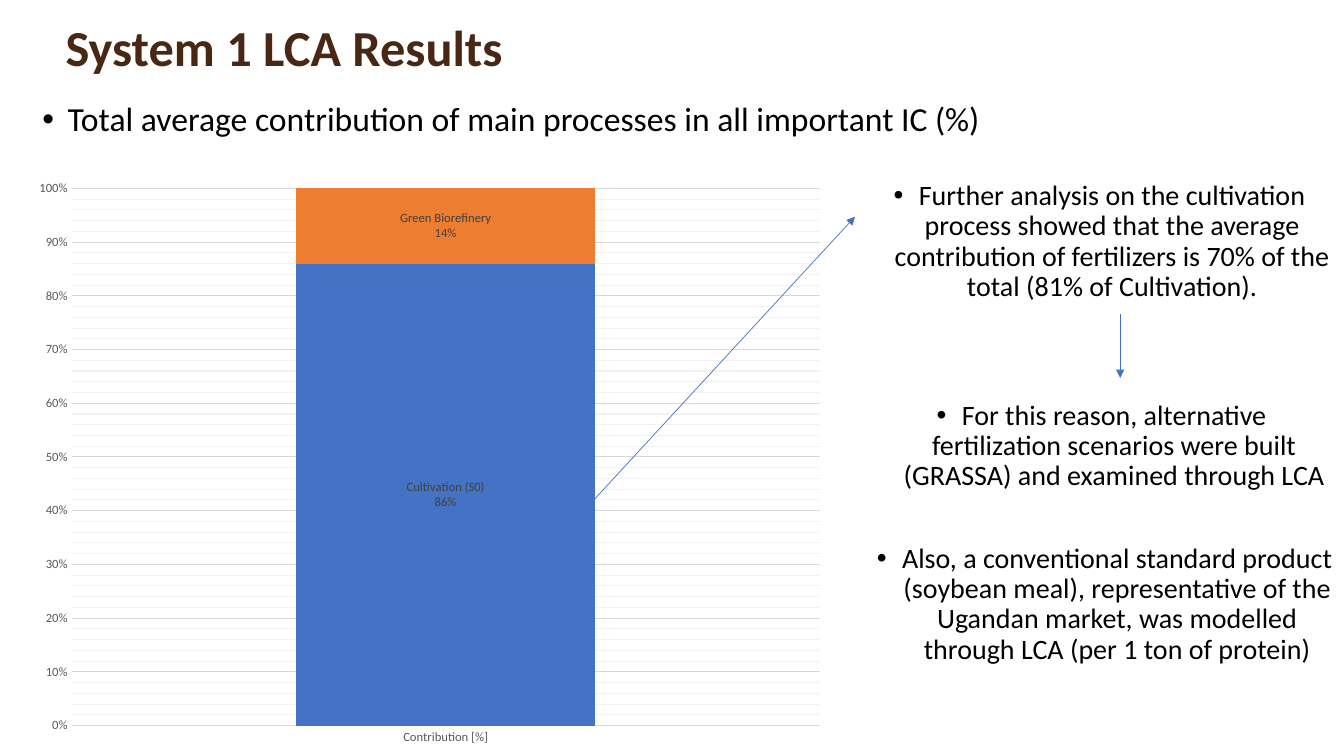
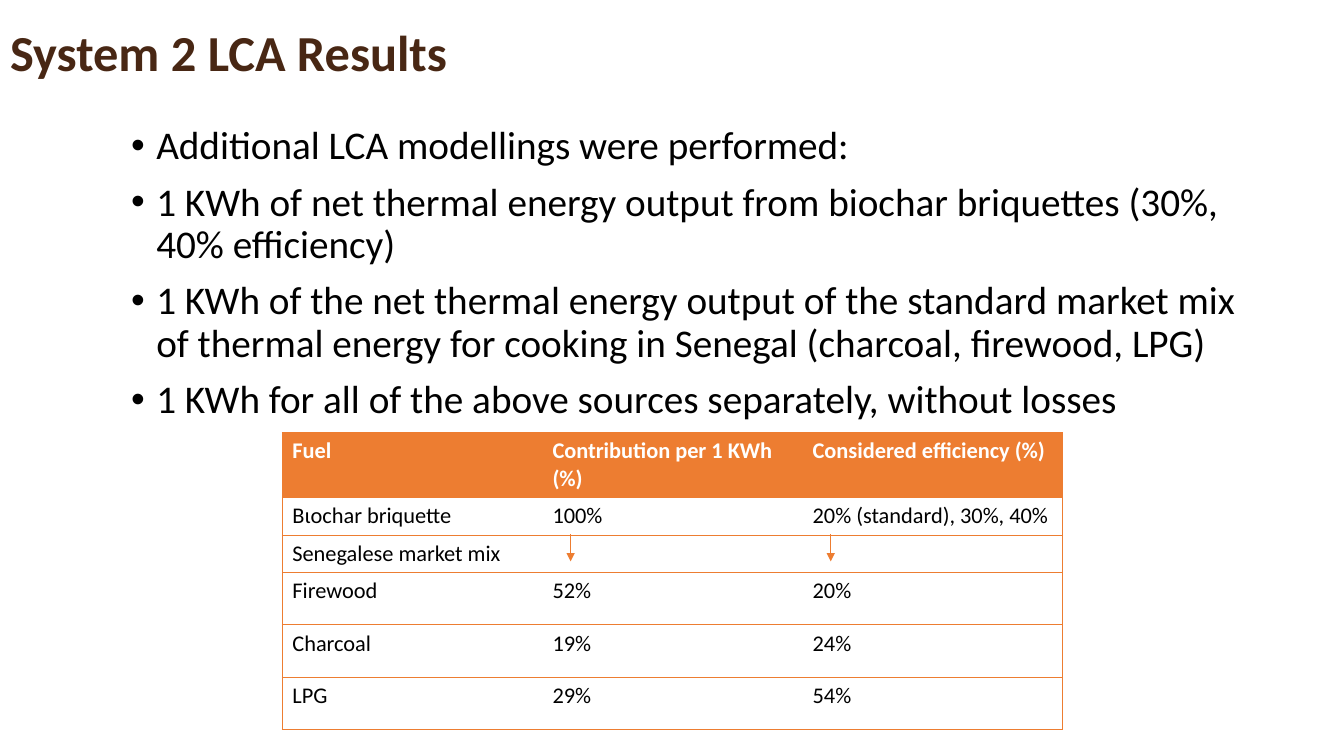
import dataclasses

import lxml.etree
import pptx
import pptx.chart.data
import pptx.dml.color
import pptx.enum.chart
import pptx.enum.shapes
import pptx.enum.text
import pptx.oxml.ns
import pptx.util

ALIGN = pptx.enum.text.PP_ALIGN
ANCHOR = pptx.enum.text.MSO_ANCHOR
CHART = pptx.enum.chart
qn = pptx.oxml.ns.qn
PLAIN_GRID = "{2D5ABB26-0587-4C30-8999-92F81FD0307C}"


@dataclasses.dataclass(frozen=True)
class Theme:
    font: str = "Calibri"
    brown: str = "482714"
    black: str = "000000"
    white: str = "FFFFFF"
    blue: str = "4472C4"
    orange: str = "ED7D31"
    axis: str = "595959"
    label: str = "404040"
    grid: str = "D9D9D9"
    faint: str = "F2F2F2"
    title: int = 36
    body: int = 28
    lead: int = 24
    note: int = 20
    cell: int = 16
    tick: int = 9
    thin: float = 0.5
    rule: float = 0.75


T = Theme()


def px(*sizes):
    """Turn px, 100 to the inch, into EMU."""
    return [pptx.util.Emu(size * 9144) for size in sizes]


def rgb(code):
    return pptx.dml.color.RGBColor.from_string(code)


def put(item, **vals):
    for key, val in vals.items():
        setattr(item, key, val)


def style(font, size, color, bold=False):
    put(font, name=T.font, size=pptx.util.Pt(size), bold=bold)
    font.color.rgb = rgb(color)


def stroke(line, color, width):
    line.color.rgb = rgb(color)
    line.width = pptx.util.Pt(width)


def add(parent, tag, **vals):
    return lxml.etree.SubElement(parent, qn(tag), vals)


def trace(parent, tag, color, width):
    """Add a solid line as XML."""
    line = add(parent, tag, w=str(pptx.util.Pt(width)))
    add(add(line, "a:solidFill"), "a:srgbClr", val=color)


def place(shape, box):
    put(shape, **dict(zip(("left", "top", "width", "height"), px(*box))))


def write(shape, texts, size, color=T.black, bold=False, bullet=True,
          align=ALIGN.LEFT, anchor=ANCHOR.TOP):
    frame = shape.text_frame
    put(frame, word_wrap=True, auto_size=pptx.enum.text.MSO_AUTO_SIZE.NONE,
        vertical_anchor=anchor)
    for i, text in enumerate(texts):
        para = frame.add_paragraph() if i else frame.paragraphs[0]
        if bullet:
            props = para._p.get_or_add_pPr()
            indent = px(25)[0]
            props.set("marL", str(indent))
            props.set("indent", str(-indent))
            add(props, "a:buFont", typeface="Arial")
            add(props, "a:buChar", char="•")
        put(para, alignment=align, line_spacing=0.9,
            space_before=pptx.util.Pt(10 if i else 0))
        run = para.add_run()
        run.text = text
        style(run.font, size, color, bold)


def start(deck, title, head, points, box, size):
    """Add a slide with its title and main list."""
    slide = deck.slides.add_slide(deck.slide_layouts[1])
    place(slide.shapes.title, head)
    write(slide.shapes.title, [title], T.title, T.brown, bold=True,
          bullet=False, anchor=ANCHOR.MIDDLE)
    body = slide.placeholders[1]
    place(body, box)
    write(body, points, size)
    return slide


def arrow(slide, ends, color):
    line = slide.shapes.add_connector(
        pptx.enum.shapes.MSO_CONNECTOR.STRAIGHT, *px(*ends))
    stroke(line.line, color, T.thin)
    props = line._element.spPr
    add(props.find(qn("a:ln")), "a:tailEnd", type="triangle")
    add(props, "a:effectLst")


def note(slide, text, box):
    shape = slide.shapes.add_textbox(*px(*box))
    write(shape, [text], T.note, align=ALIGN.CENTER)


def stack(slide, box, shares):
    """Draw one stacked column; shares holds name, value and colour."""
    data = pptx.chart.data.CategoryChartData(number_format="0%")
    data.categories = ["Contribution [%]"]
    for name, value, _ in shares:
        data.add_series(name, [value])
    chart = slide.shapes.add_chart(
        CHART.XL_CHART_TYPE.COLUMN_STACKED, *px(*box), data).chart
    put(chart, has_legend=False, has_title=False)
    style(chart.font, T.tick, T.axis)
    plot = chart.plots[0]
    put(plot, gap_width=150, overlap=100, vary_by_categories=False)
    for series, (_, _, color) in zip(plot.series, shares):
        series.format.fill.solid()
        series.format.fill.fore_color.rgb = rgb(color)
        labels = series.data_labels
        put(labels, show_value=True, show_series_name=True,
            number_format="0%", number_format_is_linked=False,
            position=CHART.XL_LABEL_POSITION.CENTER)
        style(labels.font, T.tick, T.label)
        mark = lxml.etree.Element(qn("c:separator"))
        mark.text = "\n"
        labels._element.find(qn("c:showBubbleSize")).addnext(mark)
    cats, vals = chart.category_axis, chart.value_axis
    for axis in (cats, vals):
        put(axis, major_tick_mark=CHART.XL_TICK_MARK.NONE,
            minor_tick_mark=CHART.XL_TICK_MARK.NONE)
        style(axis.tick_labels.font, T.tick, T.axis)
    stroke(cats.format.line, T.grid, T.rule)
    put(vals, minimum_scale=0, maximum_scale=1, major_unit=0.1,
        minor_unit=0.02, has_major_gridlines=True, has_minor_gridlines=True)
    put(vals.tick_labels, number_format="0%", number_format_is_linked=False)
    vals.format.line.fill.background()
    stroke(vals.major_gridlines.format.line, T.grid, T.rule)
    minor = vals._element.find(qn("c:minorGridlines"))
    trace(add(minor, "c:spPr"), "a:ln", T.faint, T.rule)


def edge(cell, sides):
    """Rule the named sides of a cell, given in the order L, R, T, B."""
    props = cell._tc.get_or_add_tcPr()
    for side in sides:
        trace(props, "a:ln" + side, T.orange, T.thin)


def grid(slide, left, top, width, highs, rows):
    """Draw the table; an empty cell gets a down arrow."""
    cols = len(rows[0])
    table = slide.shapes.add_table(
        len(rows), cols, *px(left, top, width * cols, sum(highs))).table
    table._tbl.tblPr.find(qn("a:tableStyleId")).text = PLAIN_GRID
    table.horz_banding = False
    for col in table.columns:
        col.width = px(width)[0]
    for r, (high, row) in enumerate(zip(highs, rows)):
        table.rows[r].height = px(high)[0]
        for c, text in enumerate(row):
            cell = table.cell(r, c)
            edge(cell, "L" * (c == 0) + "R" * (c == cols - 1) + "TB")
            cell.fill.solid()
            cell.fill.fore_color.rgb = rgb(T.white if r else T.orange)
            para = cell.text_frame.paragraphs[0]
            if text:
                run = para.add_run()
                run.text = text
                style(run.font, T.cell, T.black if r else T.white, not r)
            else:
                add(para._p, "a:endParaRPr", sz=str(T.cell * 100))
                x, y = left + width * c + 28, top + sum(highs[:r])
                arrow(slide, (x, y, x, y + 27), T.orange)


def first(deck):
    slide = start(
        deck, "System 1 LCA Results", (55, 10, 1002, 79),
        ["Total average contribution of main processes in all important "
         "IC (%)"], (32, 97, 1146, 79), T.lead)
    stack(slide, (23, 168, 806, 582),
          [("Cultivation (S0)", 0.86, T.blue),
           ("Green Biorefinery", 0.14, T.orange)])
    for text, box in (
        ("Further analysis on the cultivation process showed that the "
         "average contribution of fertilizers is 70% of the total (81% of "
         "Cultivation).", (848, 175, 485, 79)),
        ("For this reason, alternative fertilization scenarios were built "
         "(GRASSA) and examined through LCA", (855, 393, 475, 79)),
        ("Also, a conventional standard product (soybean meal), "
         "representative of the Ugandan market, was modelled through LCA "
         "(per 1 ton of protein)", (858, 535, 475, 79)),
    ):
        note(slide, text, box)
    for ends in ((589, 496, 848, 215), (1111, 312, 1111, 375)):
        arrow(slide, ends, T.blue)


def second(deck):
    slide = start(
        deck, "System 2 LCA Results", (0, 15, 1179, 79),
        ["Additional LCA modellings were performed:",
         "1 ΚWh of net thermal energy output from biochar briquettes (30%, "
         "40% efficiency)",
         "1 KWh of the net thermal energy output of the standard market mix "
         "of thermal energy for cooking in Senegal (charcoal, firewood, "
         "LPG)",
         "1 KWh for all of the above sources separately, without losses"],
        (120, 120, 1150, 476), T.body)
    grid(slide, 280, 429, 258, [64, 37, 37, 52, 52, 52], [
        ("Fuel", "Contribution per 1 KWh (%)", "Considered efficiency (%)"),
        ("Βιοchar briquette", "100%", "20% (standard), 30%, 40%"),
        ("Senegalese market mix", "", ""),
        ("Firewood", "52%", "20%"),
        ("Charcoal", "19%", "24%"),
        ("LPG", "29%", "54%"),
    ])


def main():
    deck = pptx.Presentation()
    deck.slide_width, deck.slide_height = px(1333, 750)
    first(deck)
    second(deck)
    deck.save("out.pptx")


if __name__ == "__main__":
    main()
